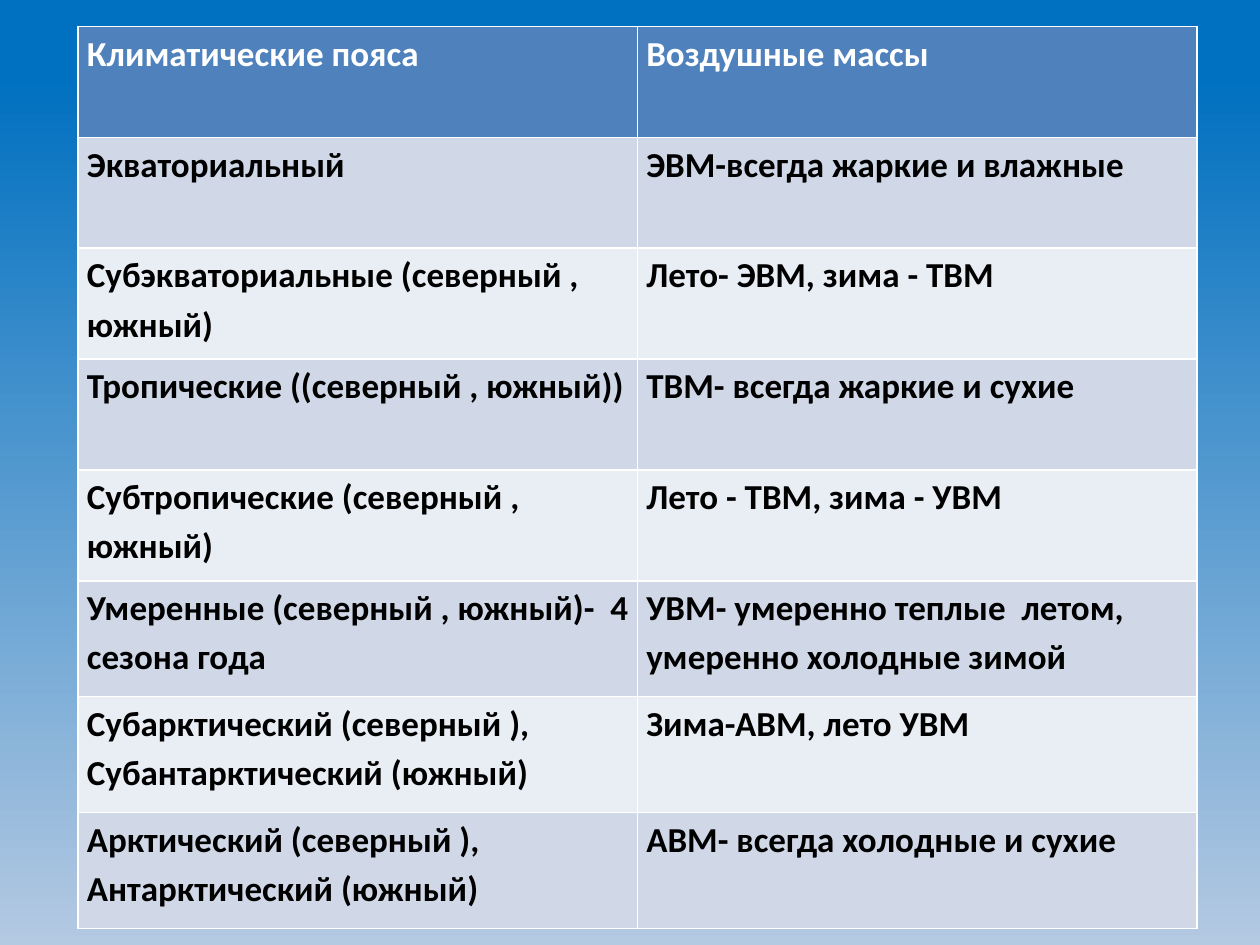
from pptx import Presentation
from pptx.dml.color import RGBColor
from pptx.util import Inches, Pt

# Content: climate belt, air masses
ROWS = [
    ("Климатические пояса", "Воздушные массы"),
    ("Экваториальный", "ЭВМ-всегда жаркие и влажные"),
    ("Субэкваториальные (северный , южный)", "Лето- ЭВМ, зима - ТВМ"),
    ("Тропические ((северный , южный))", "ТВМ- всегда жаркие и сухие"),
    ("Субтропические (северный , южный)", "Лето - ТВМ, зима - УВМ"),
    ("Умеренные (северный , южный)-  4 сезона года",
     "УВМ- умеренно теплые  летом,  умеренно холодные зимой"),
    ("Субарктический (северный ), Субантарктический (южный)",
     "Зима-АВМ, лето УВМ"),
    ("Арктический (северный ), Антарктический (южный)",
     "АВМ- всегда холодные и сухие"),
]
HEIGHTS = [0.88] * 5 + [0.92] * 3
WIDTH = 4.44

WHITE = RGBColor(0xFF, 0xFF, 0xFF)
BLACK = RGBColor(0, 0, 0)
HEAD = RGBColor(0x4F, 0x81, 0xBD)
BANDS = [RGBColor(0xE9, 0xED, 0xF4), RGBColor(0xD0, 0xD8, 0xE8)]
SKY = [(0.08, RGBColor(0x00, 0x70, 0xC0)), (1, RGBColor(0xB4, 0xC9, 0xE2))]

deck = Presentation()
deck.slide_width, deck.slide_height = Inches(10), Inches(7.5)
slide = deck.slides.add_slide(deck.slide_layouts[6])

# Background, dark at the top
back = slide.background.fill
back.gradient()
back.gradient_angle = 270
for stop, (place, color) in zip(back.gradient_stops, SKY):
    stop.position = place
    stop.color.rgb = color

# Table; its default style draws the white borders
table = slide.shapes.add_table(
    len(ROWS), 2, Inches(0.62), Inches(0.21),
    Inches(2 * WIDTH), Inches(sum(HEIGHTS))).table
for col in table.columns:
    col.width = Inches(WIDTH)

for r, (texts, height) in enumerate(zip(ROWS, HEIGHTS)):
    table.rows[r].height = Inches(height)
    for c, text in enumerate(texts):
        cell = table.cell(r, c)
        cell.margin_left = cell.margin_right = Inches(0.07)
        cell.margin_top = cell.margin_bottom = 0
        cell.fill.solid()
        cell.fill.fore_color.rgb = BANDS[r % 2] if r else HEAD
        para = cell.text_frame.paragraphs[0]
        para.text = text
        para.line_spacing = 1.15
        font = para.runs[0].font
        font.name, font.size, font.bold = "Calibri", Pt(20), True
        font.color.rgb = BLACK if r else WHITE

deck.save("out.pptx")
